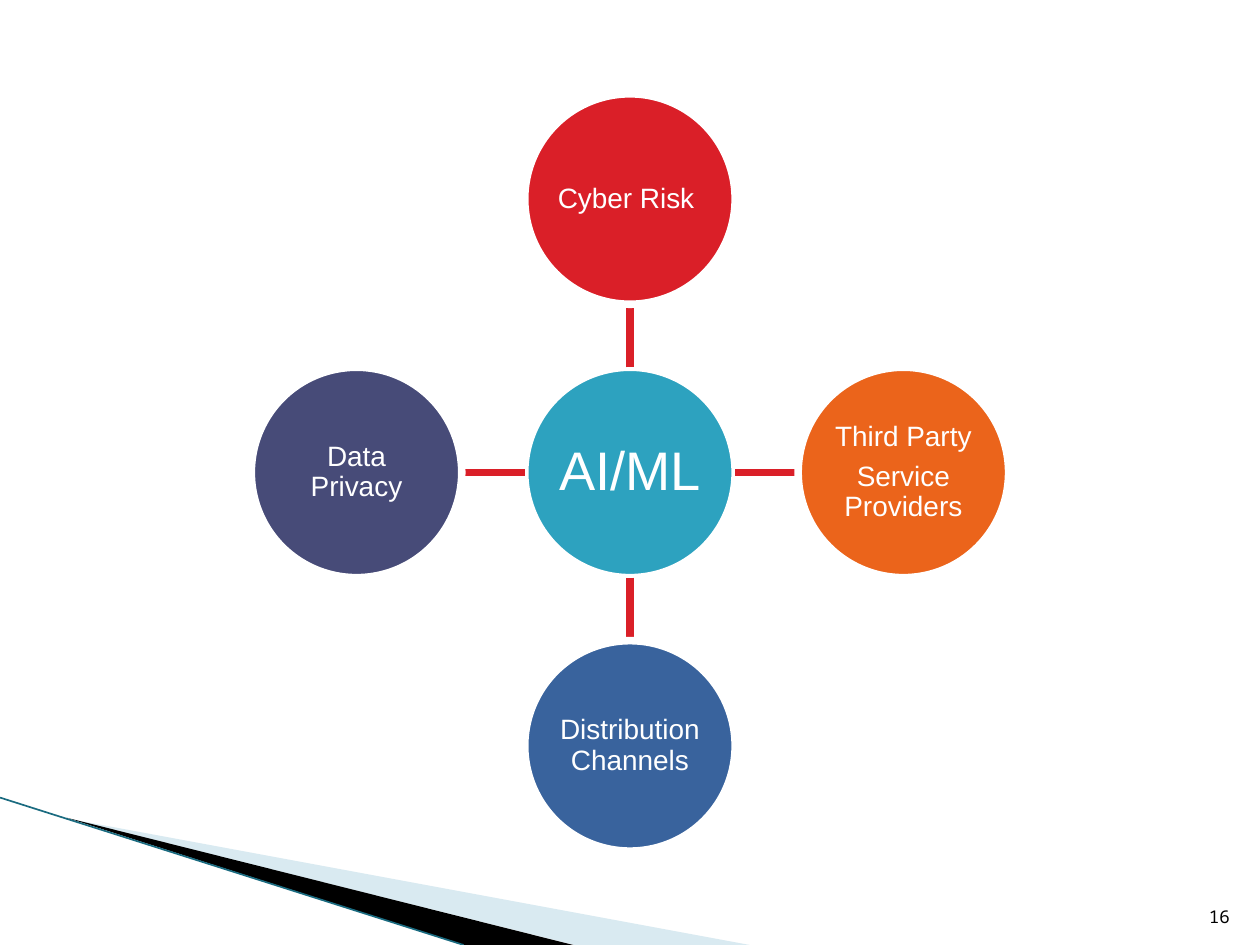
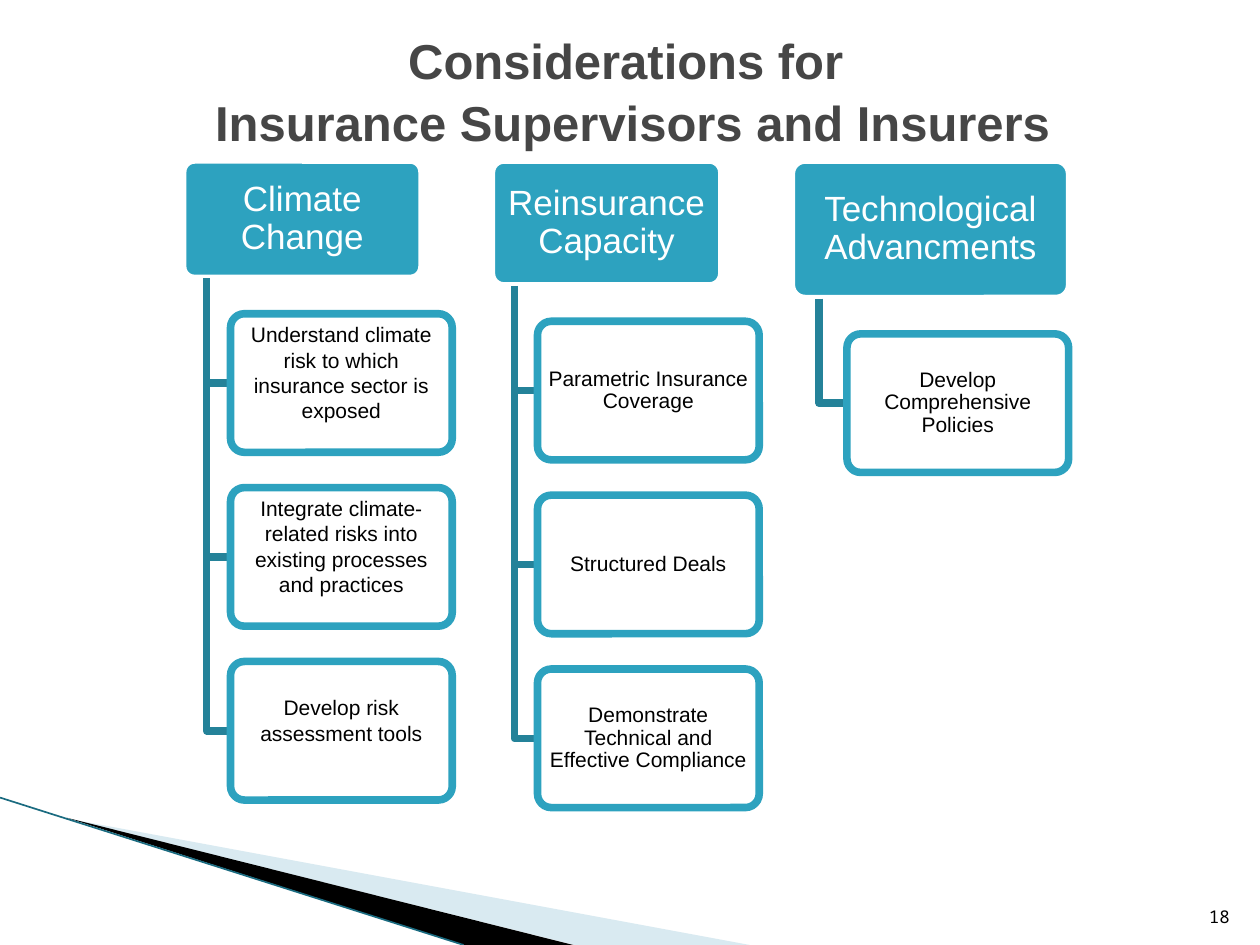
from pptx import Presentation
from pptx import util as u
from pptx.dml import color
from pptx.enum import shapes, text
from pptx.oxml import ns
from lxml import etree

FONT = "Arial"
TEAL, TRUNK, RED, WHITE, BLACK = "2DA2BF", "248299", "DA1F28", "FFFFFF", "000000"
WEDGE, EDGE, TITLE = "A0CBDC", "1A6B80", "464646"
STROKE = 4.33

ROUND = shapes.MSO_SHAPE.ROUNDED_RECTANGLE
OVAL = shapes.MSO_SHAPE.OVAL
CENTER = text.PP_ALIGN.CENTER
MIDDLE = text.MSO_ANCHOR.MIDDLE

SPOKES = [
    (0, -1, RED, ["Cyber Risk "]),
    (1, 0, "EB641B", ["Third Party", "Service Providers"]),
    (0, 1, "39639D", ["Distribution Channels"]),
    (-1, 0, "474B78", ["Data Privacy"]),
]

LOOSE = {"spacing": 1.0, "foot": 0.17}
COLUMNS = [
    (1.45, 1.9, 0.94, "Climate Change", LOOSE, [
        "Understand climate risk to which insurance sector is exposed",
        "Integrate climate-related risks into existing processes and practices",
        "Develop risk assessment tools"]),
    (3.9, 1.83, 1.0, "Reinsurance Capacity", {}, [
        "Parametric Insurance Coverage",
        "Structured Deals",
        "Demonstrate Technical and Effective Compliance"]),
    (6.28, 2.21, 1.1, "Technological Advancments", {}, [
        "Develop Comprehensive Policies"]),
]


def rgb(value):
    return color.RGBColor.from_string(value)


def put(target, **values):
    for name, value in values.items():
        setattr(target, name, value)


def paint(sp, fill=None, line=None, width=STROKE, alpha=None):
    sp.shadow.inherit = False
    if fill:
        sp.fill.solid()
        sp.fill.fore_color.rgb = rgb(fill)
        if alpha:
            clr = sp.fill._xPr.find(".//" + ns.qn("a:srgbClr"))
            etree.SubElement(clr, ns.qn("a:alpha"), val=str(alpha * 1000))
    else:
        sp.fill.background()
    if line:
        sp.line.color.rgb = rgb(line)
        sp.line.width = u.Pt(width)
    else:
        sp.line.fill.background()


def write(sp, lines, size, ink, align=CENTER, anchor=MIDDLE, inset=0.01,
          foot=0, spacing=0.9, name=FONT, bold=False):
    tf = sp.text_frame
    put(tf, word_wrap=True, auto_size=text.MSO_AUTO_SIZE.NONE, vertical_anchor=anchor,
        margin_left=u.Inches(inset), margin_right=u.Inches(inset),
        margin_top=u.Inches(inset), margin_bottom=u.Inches(inset + foot))
    for i, line in enumerate(lines):
        p = tf.add_paragraph() if i else tf.paragraphs[0]
        p.text = line
        put(p, alignment=align, line_spacing=spacing,
            space_before=u.Pt(0.35 * size if i else 0), space_after=u.Pt(0))
        for r in p.runs:
            put(r.font, size=u.Pt(size), name=name, bold=bold)
            r.font.color.rgb = rgb(ink)


def add_shape(s, kind, x, y, w, h, **look):
    sp = s.shapes.add_shape(kind, *map(u.Inches, (x, y, w, h)))
    if kind == ROUND:
        sp.adjustments[0] = 0.1
    paint(sp, **look)
    return sp


def add_outline(s, points, close=True, **look):
    points = [(u.Inches(x), u.Inches(y)) for x, y in points]
    builder = s.shapes.build_freeform(*points[0])
    builder.add_line_segments(points[1:], close=close)
    paint(builder.convert_to_shape(), **look)


def add_line(s, x1, y1, x2, y2, ink, width=STROKE):
    cx = s.shapes.add_connector(shapes.MSO_CONNECTOR.STRAIGHT,
                                *map(u.Inches, (x1, y1, x2, y2)))
    cx.line.color.rgb = rgb(ink)
    cx.line.width = u.Pt(width)
    etree.SubElement(cx._element.spPr, ns.qn("a:effectLst"))


def add_corner(s, number):
    add_outline(s, [(0.55, 6.5), (5.95, 7.5), (4.56, 7.5)], fill=WEDGE, alpha=40)
    add_outline(s, [(0.53, 6.49), (4.55, 7.5), (3.68, 7.5)], fill=BLACK)
    add_line(s, 0, 6.33, 3.68, 7.5, EDGE, 0.95)
    box = s.shapes.add_textbox(*map(u.Inches, (9.36, 7.01, 0.5, 0.4)))
    write(box, [number], 10, BLACK, align=text.PP_ALIGN.RIGHT,
          anchor=text.MSO_ANCHOR.BOTTOM, inset=0.05, spacing=1.0, name="Noto Sans Mono")
    box.text_frame.margin_right = u.Inches(0.1)


def add_title(s, words):
    title = s.shapes.title
    put(title, left=u.Inches(0.18), top=u.Inches(0.3),
        width=u.Inches(9.68), height=u.Inches(0.82))
    write(title, [words], 28, TITLE, spacing=1.05, inset=0, bold=True)


def add_hub(s, cx, cy, size, gap):
    def circle(x, y, fill, lines, points):
        sp = add_shape(s, OVAL, x - size / 2, y - size / 2, size, size,
                       fill=fill, line=WHITE)
        write(sp, lines, points, WHITE)

    near, far = size / 2, size / 2 + gap
    circle(cx, cy, TEAL, ["AI/ML"], 31)
    for dx, dy, fill, lines in SPOKES:
        add_line(s, cx + dx * near, cy + dy * near, cx + dx * far, cy + dy * far, RED)
        circle(cx + dx * (size + gap), cy + dy * (size + gap), fill, lines, 16)


def add_column(s, x, y, w, h, heading, style, items, item_w=1.76, item_h=1.1, gap=0.28):
    head = add_shape(s, ROUND, x, y, w, h, fill=TEAL, line=WHITE)
    write(head, [heading], 20, WHITE, inset=0.04)
    base, trunk, left = y + h, x + 0.1 * w, x + 0.2 * w
    for i, item in enumerate(items):
        top = base + gap + i * (item_h + gap)
        mid = top + item_h / 2
        add_outline(s, [(trunk, base), (trunk, mid), (left, mid)], close=False, line=TRUNK)
        sp = add_shape(s, ROUND, left, top, item_w, item_h,
                       fill=WHITE, alpha=90, line=TEAL)
        write(sp, [item], 12, BLACK, inset=0.03, **style)


def hub_slide(prs):
    s = prs.slides.add_slide(prs.slide_layouts[6])
    add_corner(s, "16")
    add_hub(s, 5, 3.75, 1.67, 0.5)


def columns_slide(prs):
    s = prs.slides.add_slide(prs.slide_layouts[5])
    add_corner(s, "18")
    add_title(s, "Considerations for \vInsurance Supervisors and Insurers")
    for x, w, h, heading, style, items in COLUMNS:
        add_column(s, x, 1.27, w, h, heading, style, items)


def main():
    prs = Presentation()
    put(prs, slide_width=u.Inches(10), slide_height=u.Inches(7.5))
    hub_slide(prs)
    columns_slide(prs)
    prs.save("out.pptx")


if __name__ == "__main__":
    main()
